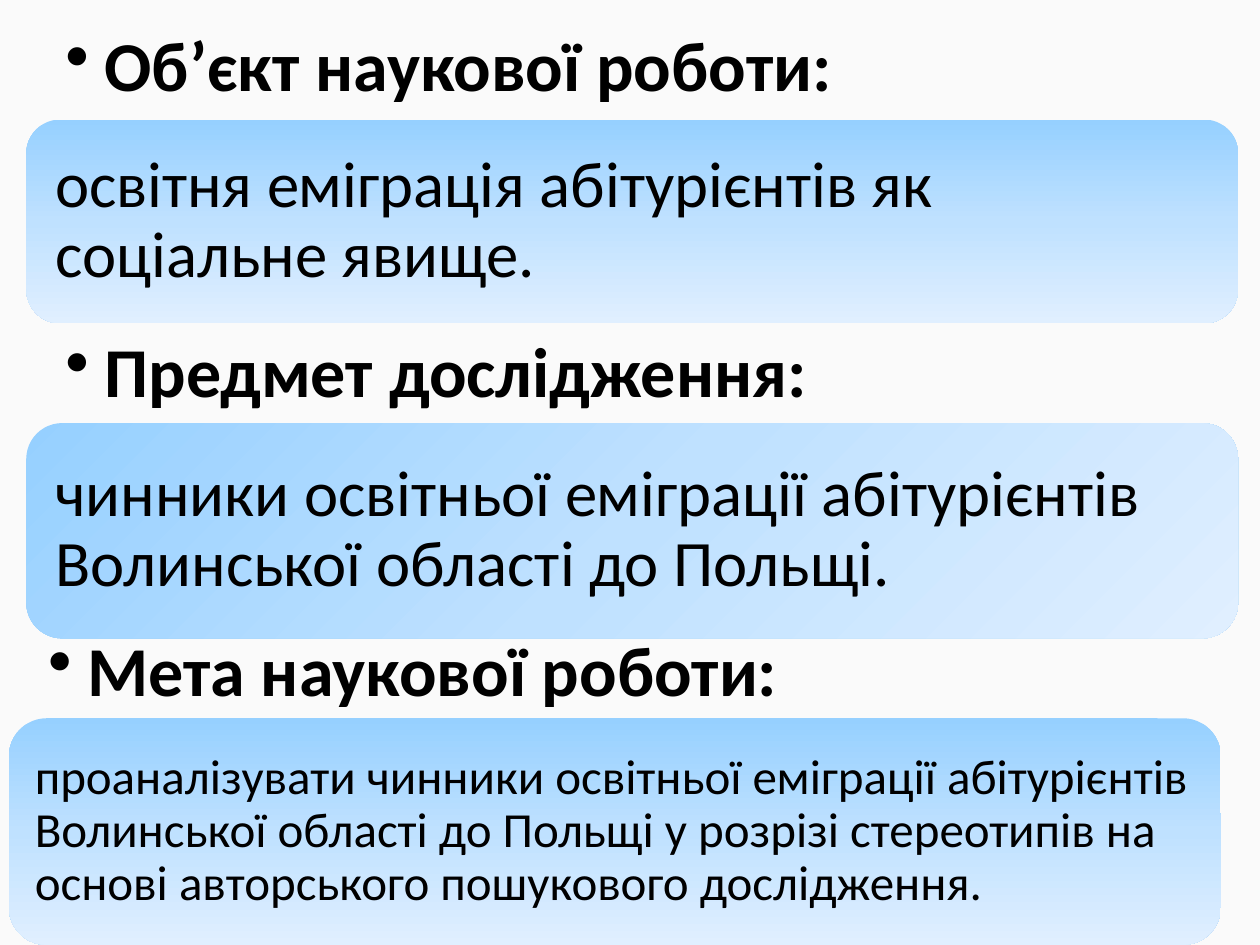
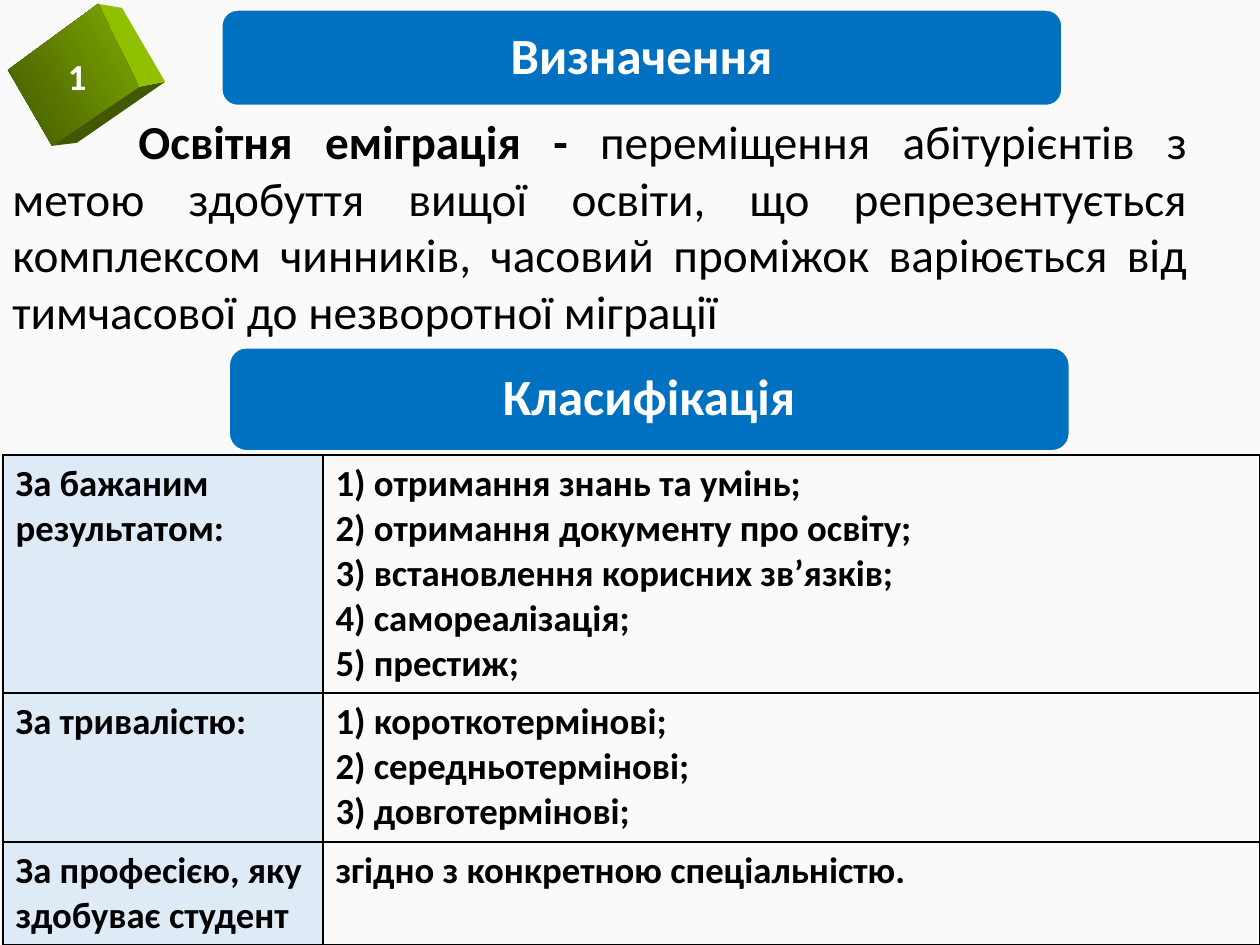
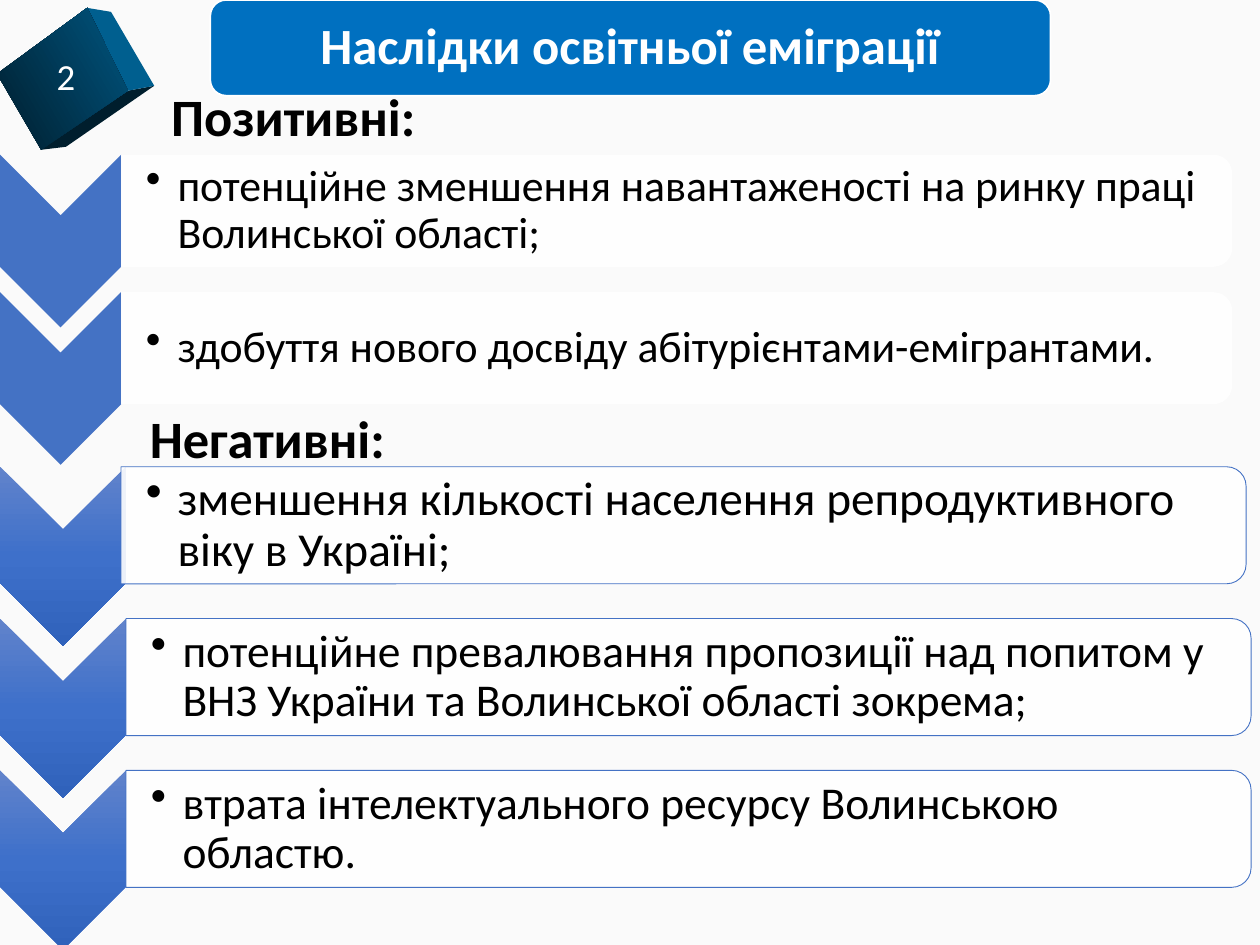
from lxml import etree
from pptx import Presentation
from pptx.dml.color import RGBColor
from pptx.enum import shapes, text
from pptx.oxml.ns import qn
from pptx.util import Cm, Pt

FONT = "Calibri"
PAPER = RGBColor(0xFA, 0xFA, 0xFA)
BLACK = RGBColor(0, 0, 0)
WHITE = RGBColor(0xFF, 0xFF, 0xFF)
BANNER = RGBColor(0x00, 0x70, 0xC0)
ACCENT = RGBColor(0x44, 0x72, 0xC4)
LABEL = RGBColor(0xDE, 0xEB, 0xF7)
SKY = [RGBColor(0x96, 0xD0, 0xFF), RGBColor(0xBF, 0xE1, 0xFF), RGBColor(0xE0, 0xEF, 0xFF)]
DEEP = [RGBColor(0x61, 0x83, 0xCB), RGBColor(0x3E, 0x70, 0xCA), RGBColor(0x30, 0x62, 0xBB)]
GREEN = [RGBColor(0x42, 0x58, 0x00), RGBColor(0x80, 0xAB, 0x00), RGBColor(0x90, 0xC0, 0x00)]
TEAL = [RGBColor(0x00, 0x1E, 0x2D), RGBColor(0x00, 0x55, 0x80), RGBColor(0x00, 0x5F, 0x8F)]

AIMS = [
    ("Об’єкт наукової роботи:", "освітня еміграція абітурієнтів як соціальне явище.",
     0.53, 0.48, 2.41, 4.11, 90, 37, 0.38),
    ("Предмет дослідження:",
     "чинники освітньої еміграції абітурієнтів Волинської області до Польщі.",
     0.53, 6.65, 8.53, 4.34, 45, 37, 0.38),
    ("Мета наукової роботи:",
     "проаналізувати чинники освітньої еміграції абітурієнтів Волинської області до Польщі "
     "у розрізі стереотипів на основі авторського пошукового дослідження.",
     0.18, 12.67, 14.48, 4.57, 90, 28, 0.3),
]
TERM = "Освітня еміграція - "
MEANING = ("переміщення абітурієнтів з метою здобуття вищої освіти, що репрезентується "
           "комплексом чинників, часовий проміжок варіюється від тимчасової до незворотної міграції")
CLASSES = [
    ("За бажаним результатом:",
     ["1) отримання знань та умінь;", "2) отримання документу про освіту;",
      "3) встановлення корисних зв’язків;", "4) самореалізація;", "5) престиж;"], 4.8),
    ("За тривалістю:",
     ["1) короткотермінові;", "2) середньотермінові;", "3) довготермінові;"], 3.0),
    ("За професією, яку здобуває студент", ["згідно з конкретною спеціальністю."], 2.08),
]
EFFECTS = [
    dict(title="Позитивні:", title_at=(3.2, 1.57), top=3.12, step=2.77,
         chevron=(2.44, 3.48), band=(22.4, 2.26), fill=[ACCENT], line=None,
         items=[("потенційне зменшення навантаженості на ринку праці Волинської області;", 25, 2.44),
                ("здобуття нового досвіду абітурієнтами-емігрантами.", 25, 2.44)]),
    dict(title="Негативні:", title_at=(2.77, 8.05), top=9.41, step=3.06,
         chevron=(2.54, 3.61), band=(22.68, 2.36), fill=DEEP, line=ACCENT,
         items=[("зменшення кількості населення репродуктивного віку в Україні;", 27, 2.44),
                ("потенційне превалювання пропозиції над попитом у ВНЗ України та "
                 "Волинської області зокрема;", 26, 2.54),
                ("втрата інтелектуального ресурсу Волинською областю.", 26, 2.54)]),
]
CUBE_FRONT = [(0.16, 1.41), (1.98, 0.08), (2.8, 1.75), (1.05, 2.94)]
CUBE_SIDE = [(1.98, 0.08), (2.46, 0.16), (3.33, 1.65), (2.8, 1.75)]
CUBE_BASE = [(1.05, 2.94), (2.8, 1.75), (3.33, 1.65), (1.55, 2.88)]


def new_page(deck):
    page = deck.slides.add_slide(deck.slide_layouts[6])
    page.background.fill.solid()
    page.background.fill.fore_color.rgb = PAPER
    return page


def paint(shape, colors, angle=0, line=None, width=1):
    shape.shadow.inherit = False
    if len(colors) == 1:
        shape.fill.solid()
        shape.fill.fore_color.rgb = colors[0]
    else:
        shape.fill.gradient()
        shape.fill.gradient_angle = -angle % 360
        stops = shape._element.spPr.find(qn("a:gradFill")).find(qn("a:gsLst"))
        for stop in list(stops):
            stops.remove(stop)
        for index, color in enumerate(colors):
            place = str(100000 * index // (len(colors) - 1))
            stop = etree.SubElement(stops, qn("a:gs"), pos=place)
            etree.SubElement(stop, qn("a:srgbClr"), val=str(color))
    if line is None:
        shape.line.fill.background()
    else:
        shape.line.color.rgb = line
        shape.line.width = Pt(width)


def style(para, size, color=BLACK, bold=False):
    for span in para.runs:
        span.font.name = FONT
        span.font.size = Pt(size)
        span.font.bold = bold
        span.font.color.rgb = color


def write(shape, words, size, color=BLACK, bold=False, align=text.PP_ALIGN.LEFT,
          insets=(0.25, 0.13, 0.25, 0.13), anchor=text.MSO_ANCHOR.TOP, spacing=None, bullet=None):
    frame = shape.text_frame
    frame.word_wrap = True
    frame.vertical_anchor = anchor
    frame.margin_left, frame.margin_top, frame.margin_right, frame.margin_bottom = map(Cm, insets)
    para = frame.paragraphs[0]
    para.text = words
    para.alignment = align
    para.line_spacing = spacing
    if bullet:
        props = para._p.get_or_add_pPr()
        props.set("marL", str(Cm(bullet)))
        props.set("indent", str(-Cm(bullet)))
        etree.SubElement(props, qn("a:buChar"), char="•")
    style(para, size, color, bold)


def add_text(page, left, top, width, height, words, size, **options):
    box = page.shapes.add_textbox(Cm(left), Cm(top), Cm(width), Cm(height))
    write(box, words, size, **options)
    return box


def add_round(page, left, top, width, height):
    return page.shapes.add_shape(shapes.MSO_SHAPE.ROUNDED_RECTANGLE,
                                 Cm(left), Cm(top), Cm(width), Cm(height))


def add_turned(page, kind, left, top, width, height):
    shape = page.shapes.add_shape(kind, Cm(left + (width - height) / 2),
                                  Cm(top + (height - width) / 2), Cm(height), Cm(width))
    shape.rotation = 90
    return shape


def add_banner(page, left, top, height, words):
    banner = add_round(page, left, top, 16.94, height)
    paint(banner, [BANNER], line=WHITE)
    write(banner, words, 29, WHITE, True, text.PP_ALIGN.CENTER, (0.3,) * 4,
          text.MSO_ANCHOR.MIDDLE, 0.9)


def add_cube(page, left, top, colors, number, number_left, bold):
    dark, middle, light = colors
    for points, fill in ((CUBE_BASE, [dark]), (CUBE_SIDE, [light]), (CUBE_FRONT, [dark, middle])):
        corners = [(Cm(left + x), Cm(top + y)) for x, y in points]
        outline = page.shapes.build_freeform(*corners[0])
        outline.add_line_segments(corners[1:])
        paint(outline.convert_to_shape(), fill, angle=-30)
    add_text(page, number_left, 0.95, 1.5, 1.14, number, 21, color=WHITE, bold=bold)


def build_aims(deck):
    page = new_page(deck)
    for heading, words, left, heading_top, top, height, angle, size, inset in AIMS:
        panel = add_round(page, left, top, 24.43, height)
        paint(panel, SKY, angle)
        write(panel, words, size, insets=(inset,) * 4, anchor=text.MSO_ANCHOR.MIDDLE, spacing=0.9)
        add_text(page, left, heading_top, 24.43, 2.95, heading, 40, bold=True,
                 insets=(0.79, 0.15, 0.79, 0.15), spacing=0.9, bullet=0.79)


def add_borders(cell):
    props = cell._tc.get_or_add_tcPr()
    for index, side in enumerate(("a:lnL", "a:lnR", "a:lnT", "a:lnB")):
        line = etree.Element(qn(side), w=str(Pt(1)))
        fill = etree.SubElement(line, qn("a:solidFill"))
        etree.SubElement(fill, qn("a:srgbClr"), val=str(BLACK))
        props.insert(index, line)


def build_definition(deck):
    page = new_page(deck)
    height = sum(row[2] for row in CLASSES)
    table = page.shapes.add_table(len(CLASSES), 2, Cm(0.06), Cm(9.17), Cm(25.34), Cm(height)).table
    table.first_row = table.horz_banding = False
    for column, width in zip(table.columns, (6.45, 18.89)):
        column.width = Cm(width)
    for row, (label, kinds, row_height) in enumerate(CLASSES):
        table.rows[row].height = Cm(row_height)
        for column, words in enumerate((label, "\n".join(kinds))):
            cell = table.cell(row, column)
            cell.text_frame.text = words
            for para in cell.text_frame.paragraphs:
                style(para, 21, bold=True)
            if column == 0:
                cell.fill.solid()
                cell.fill.fore_color.rgb = LABEL
            else:
                cell.fill.background()
            add_borders(cell)
    box = add_text(page, 0, 2.13, 24.18, 4.88, TERM, 27, bold=True, align=text.PP_ALIGN.JUSTIFY)
    para = box.text_frame.paragraphs[0]
    para._p.get_or_add_pPr().set("indent", str(Cm(2.54)))
    para.add_run().text = MEANING
    style(para, 27)
    para.runs[0].font.bold = True
    add_banner(page, 4.47, 0.2, 1.93, "Визначення")
    add_banner(page, 4.62, 7.01, 2.08, "Класифікація")
    add_cube(page, 0, 0, GREEN, "1", 1.12, True)


def build_effects(deck):
    page = new_page(deck)
    for group in EFFECTS:
        add_text(page, *group["title_at"], 19.48, 1.55, group["title"], 30, bold=True)
        band_width, band_height = group["band"]
        for index, (words, size, left) in enumerate(group["items"]):
            top = group["top"] + index * group["step"]
            chevron = add_turned(page, shapes.MSO_SHAPE.CHEVRON, 0, top, *group["chevron"])
            paint(chevron, group["fill"])
            band = add_turned(page, shapes.MSO_SHAPE.ROUND_2_SAME_RECTANGLE,
                              left, top, band_width, band_height)
            paint(band, [WHITE], line=group["line"], width=0.5)
            color = band._element.spPr.find(qn("a:solidFill"))[0]
            etree.SubElement(color, qn("a:alpha"), val="90000")
            add_text(page, left, top + 0.1, band_width - 0.11, band_height - 0.2, words, size,
                     insets=(0.5, 0.04, 0.04, 0.04), anchor=text.MSO_ANCHOR.MIDDLE,
                     spacing=0.9, bullet=0.64)
    add_banner(page, 4.24, 0, 1.93, "Наслідки освітньої еміграції")
    add_cube(page, -0.22, 0.08, TEAL, "2", 0.89, False)


def main():
    deck = Presentation()
    deck.slide_width, deck.slide_height = Cm(25.4), Cm(19.05)
    build_aims(deck)
    build_definition(deck)
    build_effects(deck)
    deck.save("out.pptx")


if __name__ == "__main__":
    main()
